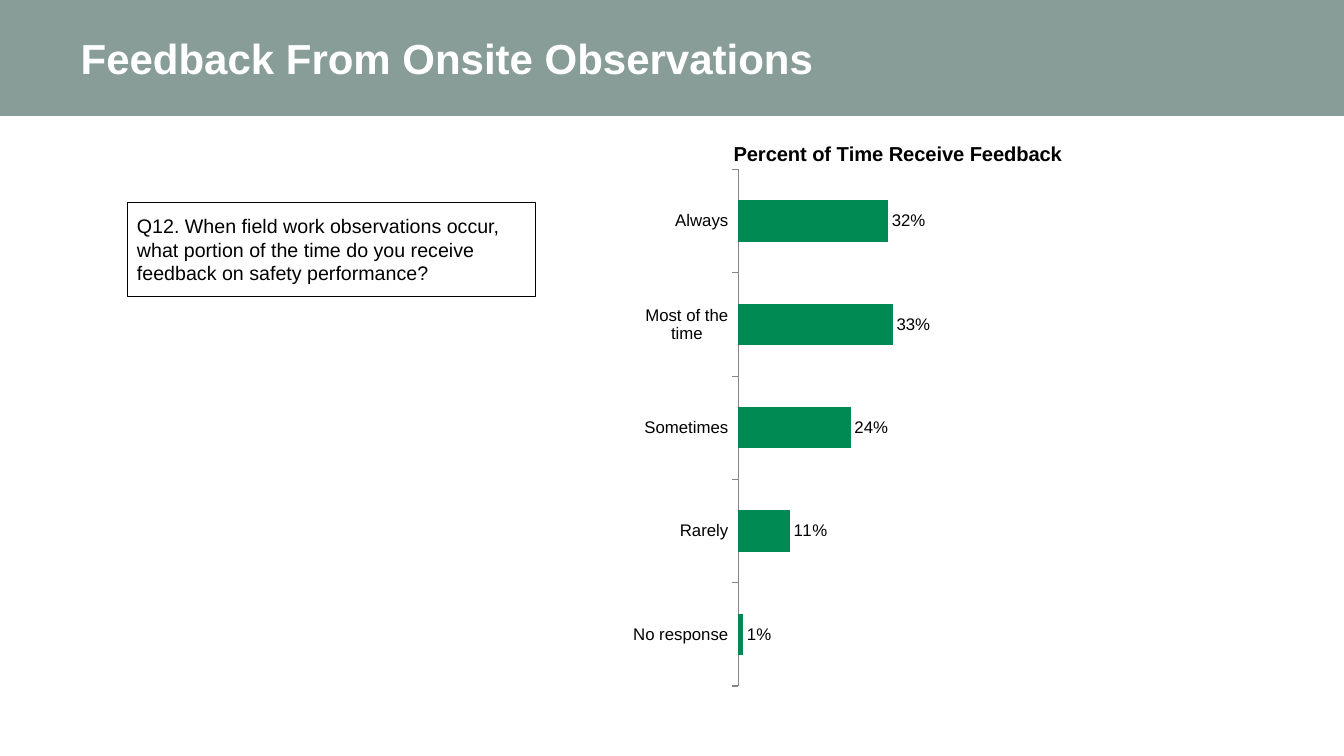
from lxml import etree
from pptx import Presentation
from pptx.chart.data import CategoryChartData
from pptx.dml.color import RGBColor
from pptx.enum.chart import XL_CHART_TYPE as CT, XL_LABEL_POSITION as LP, XL_TICK_MARK as TM
from pptx.enum.shapes import MSO_SHAPE
from pptx.enum.text import MSO_ANCHOR, PP_ALIGN
from pptx.oxml import parse_xml
from pptx.oxml.ns import nsdecls, qn
from pptx.util import Inches, Pt

# Content
TITLE = "Feedback From Onsite Observations"
QUESTION = ("Q12. When field work observations occur, what portion of the time "
            "do you receive feedback on safety performance?")
CHART_TITLE = "Percent of Time Receive Feedback"
ANSWERS = [("No response", 0.01), ("Rarely", 0.11), ("Sometimes", 0.24),
           ("Most of the time", 0.33), ("Always", 0.32)]
COLORS = {"band": "889D98", "bar": "008A53", "white": "FFFFFF",
          "black": "000000", "axis": "868686"}
FONT = "Arial"
WIDTH, BAND_HEIGHT = 13.33, 1.15


def color(name):
    return RGBColor.from_string(COLORS[name])


def style(font, size, name="black", bold=False):
    font.name, font.size, font.bold = FONT, Pt(size), bold
    font.color.rgb = color(name)


def add_run(p, text, *look):
    r = p.add_run()
    r.text = text
    style(r.font, *look)


def add_box(shapes, at, fill, line=None):
    s = shapes.add_shape(MSO_SHAPE.RECTANGLE, *map(Inches, at))
    s.shadow.inherit = False
    s.fill.solid()
    s.fill.fore_color.rgb = color(fill)
    if line:
        s.line.color.rgb = color(line)
        s.line.width = Pt(0.75)
    else:
        s.line.fill.background()
    return s


def manual_layout(target, **values):
    """Fill a c:layout element with fractions of the chart area."""
    layout = parse_xml(f"<c:layout {nsdecls('c')}><c:manualLayout/></c:layout>")
    for tag, val in values.items():
        etree.SubElement(layout[0], qn(f"c:{tag}")).set("val", str(val))
    old = target.find(qn("c:layout"))
    if old is not None:
        target.remove(old)
    return layout


prs = Presentation()
prs.slide_width, prs.slide_height = Inches(WIDTH), Inches(7.5)
slide = prs.slides.add_slide(prs.slide_layouts[5])

# Title on its band
title = slide.shapes.title
title.left, title.top, title.width, title.height = map(Inches, (0.7, 0, 12, BAND_HEIGHT))
band = add_box(slide.shapes, (0, 0, WIDTH, BAND_HEIGHT), "band")
title._element.addprevious(band._element)
tf = title.text_frame
tf.vertical_anchor = MSO_ANCHOR.MIDDLE
tf.margin_bottom = 0
p = tf.paragraphs[0]
p.alignment, p.line_spacing = PP_ALIGN.LEFT, 0.9
add_run(p, TITLE, 30, "white", True)

# Chart
data = CategoryChartData(number_format="0%")
data.categories = [name for name, _ in ANSWERS]
data.add_series("Series 1", [share for _, share in ANSWERS])
chart = slide.shapes.add_chart(
    CT.BAR_CLUSTERED, *map(Inches, (6.26, 1.31, 4.9, 5.72)), data).chart
chart.has_legend = False
style(chart.font, 12)

# Chart title
chart.has_title = True
add_run(chart.chart_title.text_frame.paragraphs[0], CHART_TITLE, 14.4, "black", True)
title_xml = chart._chartSpace.chart.find(qn("c:title"))
title_xml.find(qn("c:tx")).addnext(
    manual_layout(title_xml, xMode="edge", yMode="edge", x=0.2, y=0.01))
chart.chart_title.include_in_layout = True
title_xml.find(qn("c:overlay")).set("val", "1")

# Plot area and axes
plot_xml = chart._chartSpace.chart.plotArea
plot_xml.insert(0, manual_layout(plot_xml, layoutTarget="inner", xMode="edge",
                                 yMode="edge", x=0.217, y=0.065, w=0.615, h=0.896))
cat = chart.category_axis
cat.major_tick_mark = TM.OUTSIDE
cat.format.line.color.rgb = color("axis")
cat.format.line.width = Pt(0.75)
style(cat.tick_labels.font, 12)
val = chart.value_axis
val.minimum_scale, val.maximum_scale, val.major_unit = 0, 0.65, 0.1
val.has_major_gridlines = False
val.visible = False

# Bars and labels
plot = chart.plots[0]
plot.gap_width = 150
plot.vary_by_categories = False
bars = plot.series[0]
bars.format.fill.solid()
bars.format.fill.fore_color.rgb = color("bar")
labels = bars.data_labels
labels.show_value = True
labels.position = LP.OUTSIDE_END
labels.number_format, labels.number_format_is_linked = "0%", False
style(labels.font, 12)

# Question box
box = add_box(slide.shapes, (1.26, 2.01, 4.05, 0.93), "white", "black")
tf = box.text_frame
tf.word_wrap = True
tf.vertical_anchor = MSO_ANCHOR.MIDDLE
p = tf.paragraphs[0]
p.alignment = PP_ALIGN.LEFT
add_run(p, QUESTION, 14)

prs.save("out.pptx")
